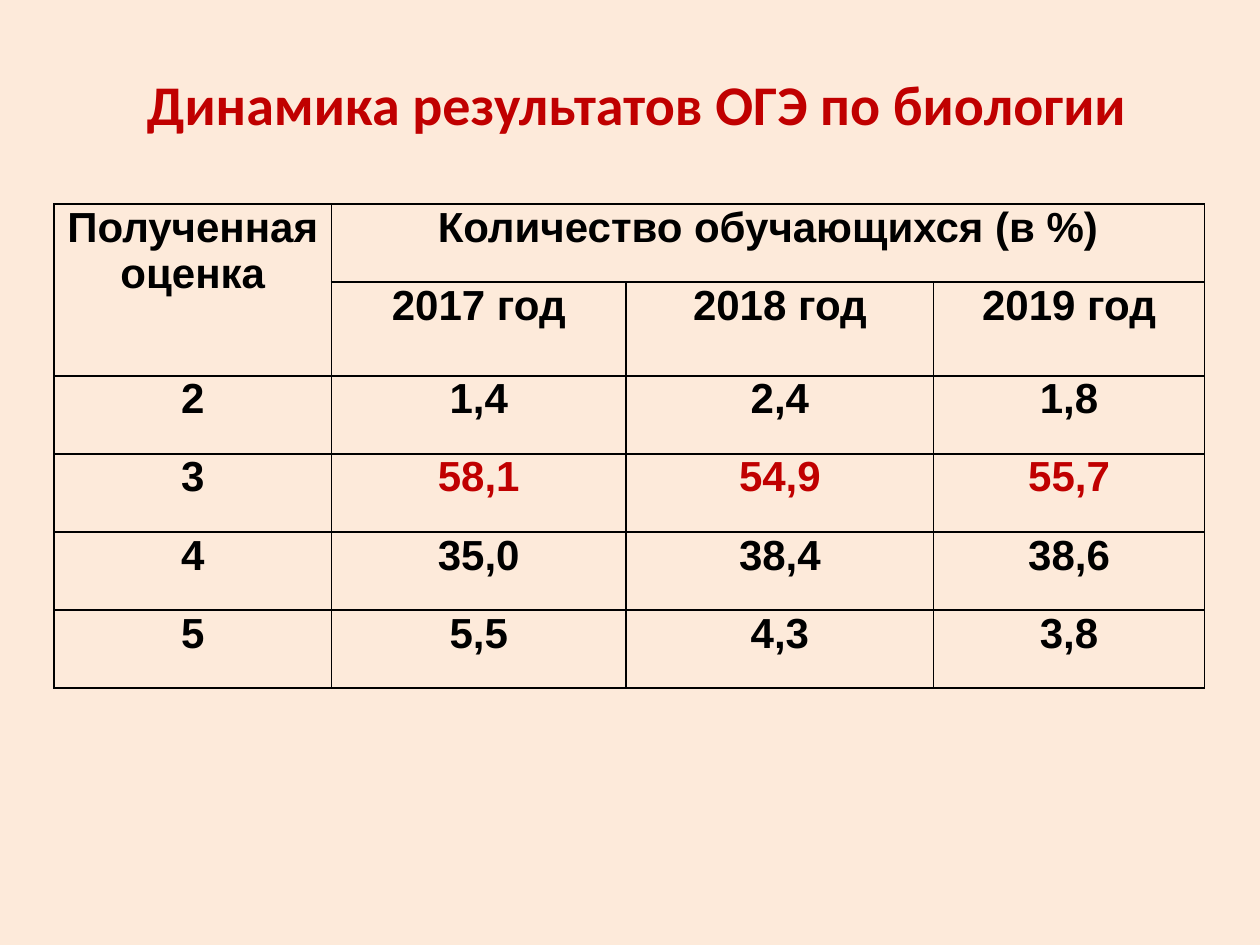
from lxml.etree import SubElement
from pptx import Presentation
from pptx.dml.color import RGBColor
from pptx.enum.text import MSO_ANCHOR, PP_ALIGN
from pptx.oxml.ns import qn
from pptx.util import Inches, Pt

BACKGROUND = RGBColor(0xFD, 0xEA, 0xDA)
BLACK = RGBColor(0x00, 0x00, 0x00)
RED = RGBColor(0xC0, 0x00, 0x00)

TITLE = "Динамика результатов ОГЭ по биологии"
ROWS = [
    ["Полученная\nоценка", "Количество обучающихся (в %)", "", ""],
    ["", "2017 год", "2018 год", "2019 год"],
    ["2", "1,4", "2,4", "1,8"],
    ["3", "58,1", "54,9", "55,7"],
    ["4", "35,0", "38,4", "38,6"],
    ["5", "5,5", "4,3", "3,8"],
]
COLUMN_WIDTHS = [2.2, 2.34, 2.44, 2.15]
ROW_HEIGHT = 0.62
HIGHLIGHTED_GRADE = "3"


def format_text(text_frame, font_name, size, color):
    for paragraph in text_frame.paragraphs:
        paragraph.alignment = PP_ALIGN.CENTER
        for run in paragraph.runs:
            run.font.name = font_name
            run.font.size = Pt(size)
            run.font.bold = True
            run.font.color.rgb = color


def add_title(slide):
    title = slide.shapes.title
    title.left, title.top = Inches(0.98), Inches(0.44)
    title.width, title.height = Inches(8.15), Inches(0.76)
    title.text_frame.text = TITLE
    title.text_frame.word_wrap = True
    title.text_frame.vertical_anchor = MSO_ANCHOR.MIDDLE
    format_text(title.text_frame, "Calibri", 32, RED)


def set_borders(cell):
    """Draw a thin black line on all four sides; call before setting the fill."""
    properties = cell._tc.get_or_add_tcPr()
    for side in ("a:lnL", "a:lnR", "a:lnT", "a:lnB"):
        line = SubElement(properties, qn(side), w=str(Pt(1)))
        fill = SubElement(line, qn("a:solidFill"))
        SubElement(fill, qn("a:srgbClr"), val=str(BLACK))


def format_cell(cell, text, color):
    set_borders(cell)
    cell.fill.background()
    cell.margin_left = cell.margin_right = Inches(0.07)
    cell.margin_top = cell.margin_bottom = 0
    cell.vertical_anchor = MSO_ANCHOR.TOP
    cell.text_frame.text = text
    format_text(cell.text_frame, "Arial", 24, color)


def add_results_table(slide):
    frame = slide.shapes.add_table(
        len(ROWS), len(COLUMN_WIDTHS), Inches(0.43), Inches(1.62),
        Inches(sum(COLUMN_WIDTHS)), Inches(ROW_HEIGHT * len(ROWS)))
    table = frame.table
    table.first_row = table.horz_banding = False
    for column, width in zip(table.columns, COLUMN_WIDTHS):
        column.width = Inches(width)
    for row_index, row in enumerate(ROWS):
        table.rows[row_index].height = Inches(ROW_HEIGHT)
        for column_index, text in enumerate(row):
            highlighted = row[0] == HIGHLIGHTED_GRADE and column_index > 0
            format_cell(table.cell(row_index, column_index), text,
                        RED if highlighted else BLACK)
    table.cell(0, 0).merge(table.cell(1, 0))
    table.cell(0, 1).merge(table.cell(0, 3))


def main():
    presentation = Presentation()
    presentation.slide_width = Inches(10)
    presentation.slide_height = Inches(7.5)
    slide = presentation.slides.add_slide(presentation.slide_layouts[5])
    slide.background.fill.solid()
    slide.background.fill.fore_color.rgb = BACKGROUND
    add_title(slide)
    add_results_table(slide)
    presentation.save("out.pptx")


if __name__ == "__main__":
    main()
